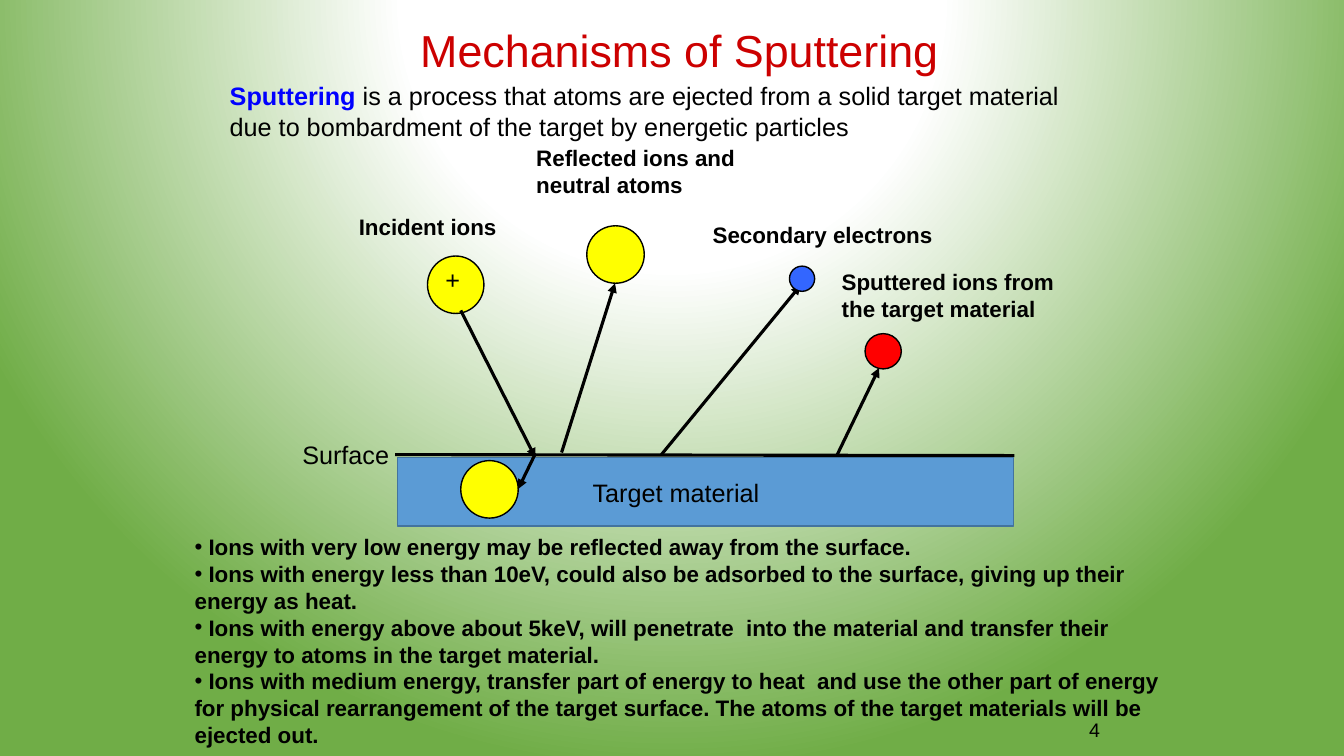
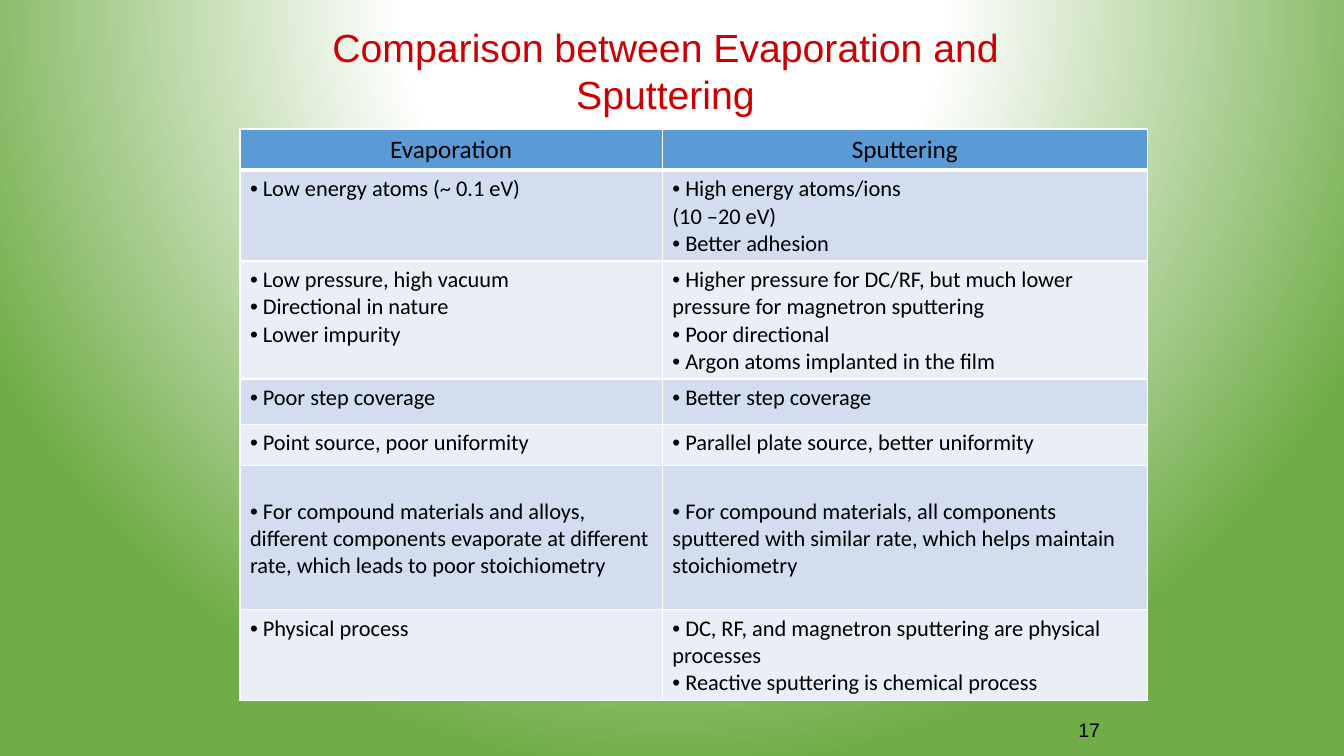
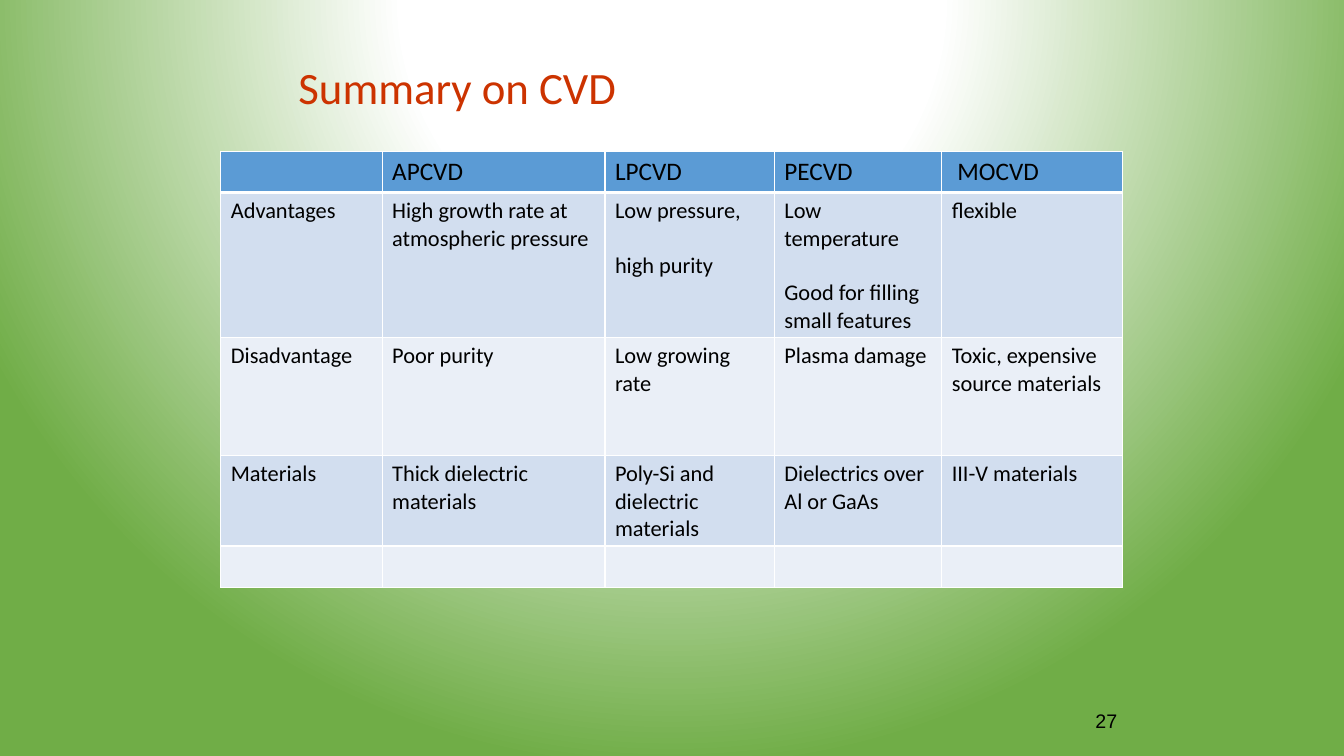
import pptx
import pptx.dml.color
import pptx.enum.shapes
import pptx.enum.text
import pptx.oxml
import pptx.oxml.ns
import pptx.util
from dataclasses import dataclass
from typing import Any, Optional

Inches = pptx.util.Inches
Pt = pptx.util.Pt
Align = pptx.enum.text.PP_ALIGN
Anchor = pptx.enum.text.MSO_ANCHOR
Shape = pptx.enum.shapes.MSO_SHAPE
qn = pptx.oxml.ns.qn
NAMESPACES = pptx.oxml.ns.nsdecls("a", "p")
Place = tuple[float, float, float, float]


@dataclass(frozen=True)
class Theme:
    heading_font: str = "Arial"
    table_font: str = "Calibri"
    title_size: int = 32
    long_title_size: int = 28
    text_size: int = 18
    detail_size: int = 16
    number_size: int = 14
    blank_line: float = 19.5
    title: str = "CC0000"
    summary_title: str = "CC3300"
    term: str = "0000FF"
    ink: str = "000000"
    paper: str = "FFFFFF"
    backdrop: str = "70AD47"
    header: str = "5B9BD5"
    target_edge: str = "43739E"
    bands: tuple[str, str] = ("D2DEEF", "EAEFF7")
    ion: str = "FFFF00"
    electron: str = "3366FF"
    sputtered: str = "FF0000"


THEME = Theme()


@dataclass(frozen=True)
class Style:
    font: str = THEME.heading_font
    size: int = THEME.text_size
    color: str = THEME.ink
    bold: bool = False


BODY = Style()
STRONG = Style(size=THEME.detail_size, bold=True)
CELL = Style(THEME.table_font, THEME.detail_size)
HEADER = Style(THEME.table_font)
NUMBER = Style(size=THEME.number_size)


@dataclass(frozen=True)
class Line:
    text: str
    bullet: bool = False
    before: float = 0


def bullets(*texts: str) -> tuple[Line, ...]:
    return tuple(Line(text, bullet=True) for text in texts)


def xml(markup: str) -> Any:
    """Parse one element whose tag still lacks its namespace declarations."""
    tag, rest = markup.split(">", 1)
    slash = "/" if tag.endswith("/") else ""
    return pptx.oxml.parse_xml(f"{tag.rstrip('/')} {NAMESPACES}{slash}>{rest}")


def rgb(color: str) -> pptx.dml.color.RGBColor:
    return pptx.dml.color.RGBColor.from_string(color)


def add_span(para: Any, text: str, style: Style) -> None:
    span = para.add_run()
    span.text = text
    span.font.name = style.font
    span.font.size = Pt(style.size)
    span.font.bold = style.bold
    span.font.color.rgb = rgb(style.color)


def add_bullet(para: Any) -> None:
    properties = para._p.get_or_add_pPr()
    properties.set("marL", "0")
    properties.set("indent", "0")
    properties.append(xml('<a:buFont typeface="Arial"/>'))
    properties.append(xml('<a:buChar char="•"/>'))


def write_lines(frame: Any, lines: tuple[Line, ...], style: Style,
                align: Any = Align.LEFT) -> None:
    for index, line in enumerate(lines):
        para = frame.add_paragraph() if index else frame.paragraphs[0]
        para.alignment = align
        para.space_before = Pt(line.before)
        if line.bullet:
            add_bullet(para)
        add_span(para, f" {line.text}" if line.bullet else line.text, style)


def move(shape: Any, place: Place) -> None:
    shape.left, shape.top, shape.width, shape.height = map(Inches, place)


def add_box(slide: Any, place: Place, anchor: Any = Anchor.TOP) -> Any:
    box = slide.shapes.add_textbox(*map(Inches, place))
    box.text_frame.word_wrap = True
    box.text_frame.vertical_anchor = anchor
    return box.text_frame


def set_backdrop(deck: Any) -> None:
    """Give the master a radial fade from white to green."""
    stops = ((0, THEME.paper), (35, THEME.paper), (100, THEME.backdrop))
    marks = "".join(f'<a:gs pos="{position * 1000}"><a:srgbClr val="{color}"/></a:gs>'
                    for position, color in stops)
    common = deck.slide_master.element.cSld
    for old in common.findall(qn("p:bg")):
        common.remove(old)
    common.insert(0, xml(
        f'<p:bg><p:bgPr><a:gradFill rotWithShape="1"><a:gsLst>{marks}</a:gsLst>'
        '<a:path path="circle"><a:fillToRect l="50000" t="-80000" r="50000" b="180000"/>'
        '</a:path></a:gradFill><a:effectLst/></p:bgPr></p:bg>'))


def add_slide(deck: Any, layout: str, title: str, place: Place, style: Style,
              centered: bool = True) -> Any:
    slide = deck.slides.add_slide(deck.slide_layouts.get_by_name(layout))
    heading = slide.shapes.title
    move(heading, place)
    frame = heading.text_frame
    frame.auto_size = pptx.enum.text.MSO_AUTO_SIZE.NONE
    frame.vertical_anchor = Anchor.TOP if centered else Anchor.MIDDLE
    para = frame.paragraphs[0]
    para.alignment = Align.CENTER if centered else Align.LEFT
    if centered:
        para._p.get_or_add_pPr().insert(
            0, xml('<a:spcBef><a:spcPct val="50000"/></a:spcBef>'))
    else:
        para.line_spacing = 0.9
    add_span(para, title, style)
    return slide


def add_number(slide: Any, number: int, left: float = 8.68,
               anchor: Any = Anchor.MIDDLE) -> None:
    frame = add_box(slide, (left, 6.98, 2.33, 0.52), anchor)
    write_lines(frame, (Line(str(number)),), NUMBER, Align.RIGHT)


@dataclass(frozen=True)
class Solid:
    place: Place
    fill: str
    kind: Any = Shape.OVAL
    edge: str = THEME.ink

    def draw(self, slide: Any) -> None:
        shape = slide.shapes.add_shape(self.kind, *map(Inches, self.place))
        shape.shadow.inherit = False
        shape.fill.solid()
        shape.fill.fore_color.rgb = rgb(self.fill)
        shape.line.color.rgb = rgb(self.edge)
        shape.line.width = Pt(1)


@dataclass(frozen=True)
class Stroke:
    start: tuple[float, float]
    end: tuple[float, float]
    arrow: bool = True

    def draw(self, slide: Any) -> None:
        line = slide.shapes.add_connector(
            pptx.enum.shapes.MSO_CONNECTOR.STRAIGHT,
            *map(Inches, self.start + self.end))
        line.line.color.rgb = rgb(THEME.ink)
        line.line.width = Pt(2.25)
        if self.arrow:
            line.line._get_or_add_ln().append(xml('<a:tailEnd type="triangle"/>'))
        line._element.spPr.append(xml("<a:effectLst/>"))


@dataclass(frozen=True)
class Label:
    text: str
    place: Place
    style: Style = STRONG

    def draw(self, slide: Any) -> None:
        write_lines(add_box(slide, self.place), (Line(self.text),), self.style)


SPUTTERING_SCENE = (
    Stroke((3.92, 4.51), (10.06, 4.52), arrow=False),
    Solid((4.24, 2.54, 0.56, 0.57), THEME.ion),
    Label("+", (4.32, 2.57, 0.4, 0.4), BODY),
    Stroke((4.57, 3.08), (5.31, 4.54)),
    Stroke((5.57, 4.49), (6.1, 2.81)),
    Solid((5.82, 2.24, 0.57, 0.57), THEME.ion),
    Label("Incident ions", (3.46, 2.07, 1.68, 0.37)),
    Label("Reflected ions and neutral atoms", (5.22, 1.38, 2.32, 0.64)),
    Stroke((6.56, 4.51), (7.94, 2.83)),
    Label("Secondary electrons", (6.97, 2.14, 2.4, 0.37)),
    Stroke((8.28, 4.56), (8.72, 3.65)),
    Label("Sputtered ions from the target material", (8.25, 2.61, 2.58, 0.64)),
    Label("Surface", (2.9, 4.31, 1.07, 0.4), BODY),
    Solid((7.83, 2.64, 0.25, 0.25), THEME.electron),
    Solid((8.58, 3.31, 0.36, 0.35), THEME.sputtered),
    Solid((3.94, 4.54, 6.11, 0.68), THEME.header, Shape.RECTANGLE, THEME.target_edge),
    Label("Target material", (5.78, 4.69, 1.97, 0.4), BODY),
    Solid((4.57, 4.57, 0.57, 0.57), THEME.ion),
    Stroke((5.31, 4.5), (5.14, 4.85)),
)

ION_ENERGIES = bullets(
    "Ions with very low energy may be reflected away from the surface.",
    "Ions with energy less than 10eV, could also be adsorbed to the surface, "
    "giving up their energy as heat.",
    "Ions with energy above about 5keV, will penetrate  into the material and "
    "transfer their energy to atoms in the target material.",
    "Ions with medium energy, transfer part of energy to heat  and use the other "
    "part of energy for physical rearrangement of the target surface. The atoms of "
    "the target materials will be ejected out.",
)


@dataclass(frozen=True)
class Row:
    height: float
    cells: tuple[tuple[Line, ...], ...]
    inset: float = 0.05


def plain_row(height: float, *texts: str) -> Row:
    return Row(height, tuple((Line(text),) if text else () for text in texts))


COMPARISON = (
    plain_row(0.41, "Evaporation", "Sputtering"),
    Row(0.9, (bullets("Low energy atoms (~ 0.1 eV)"),
              (Line("High energy atoms/ions", True), Line("(10 –20 eV)"),
               Line("Better adhesion", True)))),
    Row(1.17, (bullets("Low pressure, high vacuum", "Directional in nature",
                       "Lower impurity"),
               bullets("Higher pressure for DC/RF, but much lower pressure for "
                       "magnetron sputtering", "Poor directional",
                       "Argon atoms implanted in the film"))),
    Row(0.45, (bullets("Poor step coverage"), bullets("Better step coverage"))),
    Row(0.41, (bullets("Point source, poor uniformity"),
               bullets("Parallel plate source, better uniformity"))),
    Row(1.43, (bullets("For compound materials and alloys, different components "
                       "evaporate at different rate, which leads to poor stoichiometry"),
               bullets("For compound materials, all components sputtered with similar "
                       "rate, which helps maintain stoichiometry")), inset=0.32),
    Row(0.9, (bullets("Physical process"),
              bullets("DC, RF, and magnetron sputtering are physical processes",
                      "Reactive sputtering is chemical process"))),
)

CVD_SUMMARY = (
    plain_row(0.41, "", "APCVD", "LPCVD", "PECVD", " MOCVD"),
    Row(1.43, ((Line("Advantages"),),
               (Line("High growth rate at atmospheric pressure"),),
               (Line("Low pressure,"), Line("high purity", before=THEME.blank_line)),
               (Line("Low temperature"),
                Line("Good for filling small features", before=THEME.blank_line)),
               (Line("flexible"),))),
    plain_row(1.17, "Disadvantage", "Poor purity", "Low growing rate", "Plasma damage",
              "Toxic, expensive source materials"),
    plain_row(0.9, "Materials", "Thick dielectric materials",
              "Poly-Si and dielectric materials", "Dielectrics over Al or GaAs",
              "III-V materials"),
    plain_row(0.41, "", "", "", "", ""),
)


def add_borders(cell: Any, bottom: float) -> None:
    properties = cell._tc.get_or_add_tcPr()
    for side, width in (("L", 1), ("R", 1), ("T", 1), ("B", bottom)):
        properties.append(xml(
            f'<a:ln{side} w="{Pt(width)}"><a:solidFill><a:srgbClr val="{THEME.paper}"/>'
            f'</a:solidFill></a:ln{side}>'))


def add_grid(slide: Any, left: float, top: float, widths: tuple[float, ...],
             rows: tuple[Row, ...], header_align: Optional[Any] = Align.LEFT) -> None:
    height = sum(row.height for row in rows)
    table = slide.shapes.add_table(
        len(rows), len(widths), Inches(left), Inches(top),
        Inches(sum(widths)), Inches(height)).table
    table.horz_banding = False
    for column, width in zip(table.columns, widths):
        column.width = Inches(width)
    for index, row in enumerate(rows):
        table.rows[index].height = Inches(row.height)
        is_header = index == 0
        for position, lines in enumerate(row.cells):
            cell = table.cell(index, position)
            add_borders(cell, 3 if is_header else 1)
            cell.margin_top = Inches(row.inset)
            cell.fill.solid()
            cell.fill.fore_color.rgb = rgb(
                THEME.header if is_header else THEME.bands[(index - 1) % 2])
            write_lines(cell.text_frame, lines, HEADER if is_header else CELL,
                        header_align if is_header else Align.LEFT)


def build_mechanisms(deck: Any) -> None:
    slide = add_slide(deck, "Title and Content", "Mechanisms of Sputtering",
                      (2.53, 0.18, 8.42, 0.64),
                      Style(size=THEME.title_size, color=THEME.title))
    definition = add_box(slide, (2.18, 0.75, 8.82, 0.71)).paragraphs[0]
    add_span(definition, "Sputtering ", Style(color=THEME.term, bold=True))
    add_span(definition, "is a process that atoms are ejected from a solid target material "
             "due to bombardment of the target by energetic particles", BODY)
    for mark in SPUTTERING_SCENE:
        mark.draw(slide)
    body = slide.placeholders[1]
    move(body, (1.83, 5.24, 9.83, 2.26))
    body.text_frame.auto_size = pptx.enum.text.MSO_AUTO_SIZE.NONE
    write_lines(body.text_frame, ION_ENERGIES, STRONG)
    add_number(slide, 4)


def build_comparison(deck: Any) -> None:
    slide = add_slide(deck, "Title Only", "Comparison between Evaporation and Sputtering",
                      (2.39, 0.18, 8.42, 1.04),
                      Style(size=THEME.long_title_size, color=THEME.title))
    add_number(slide, 17)
    add_grid(slide, 2.38, 1.28, (4.19, 4.81), COMPARISON, Align.CENTER)


def build_summary(deck: Any) -> None:
    slide = add_slide(deck, "Title Only", "Summary on CVD", (2.86, 0.4, 7.36, 0.99),
                      Style(THEME.table_font, THEME.title_size, THEME.summary_title),
                      centered=False)
    add_number(slide, 27, 8.85, Anchor.TOP)
    add_grid(slide, 2.19, 1.5, (1.6, 2.21, 1.68, 1.66, 1.79), CVD_SUMMARY)


def main() -> None:
    deck = pptx.Presentation()
    deck.slide_width = Inches(13.33)
    deck.slide_height = Inches(7.5)
    set_backdrop(deck)
    build_mechanisms(deck)
    build_comparison(deck)
    build_summary(deck)
    deck.save("out.pptx")


if __name__ == "__main__":
    main()
